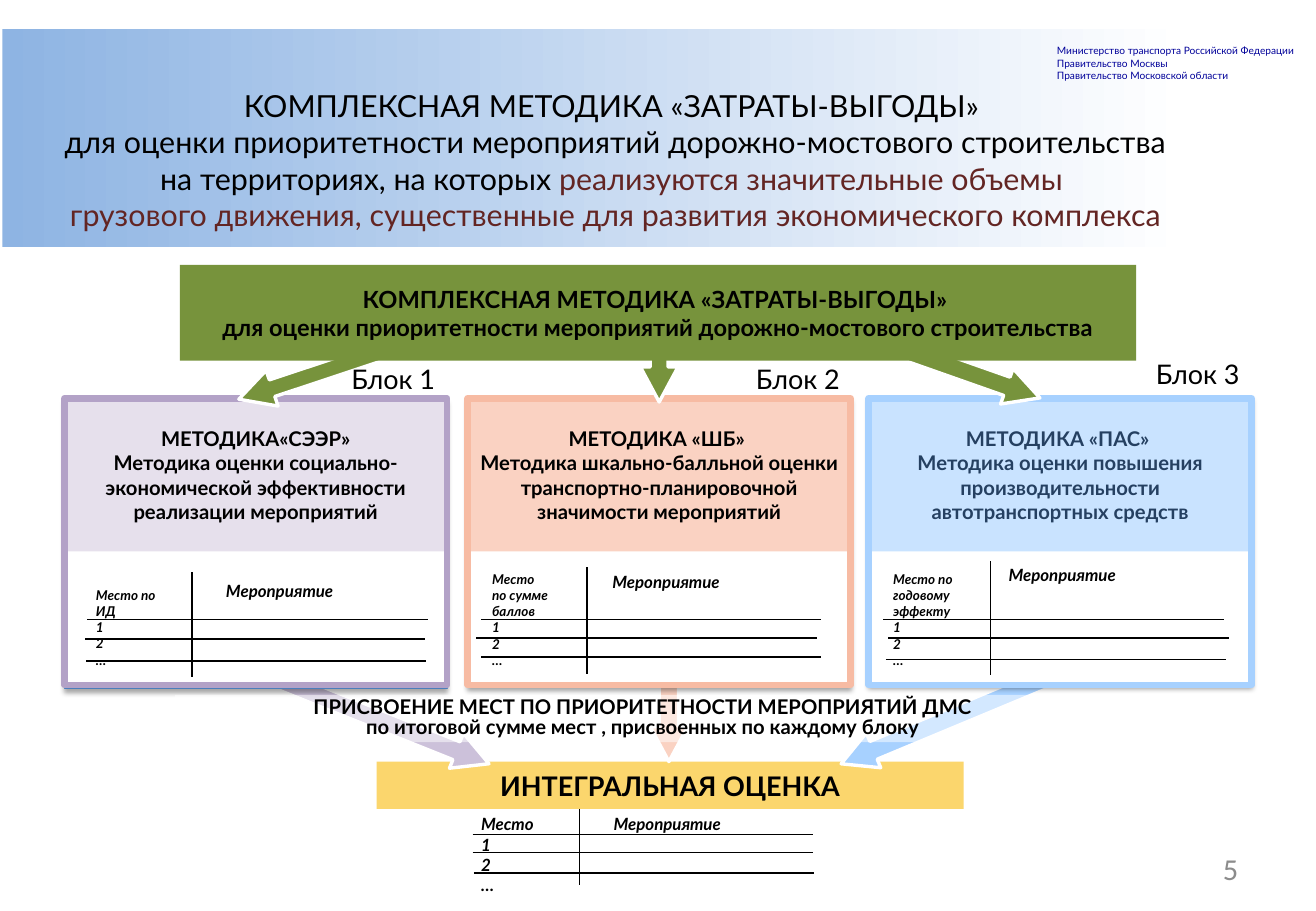
from dataclasses import dataclass

from lxml import etree
from pptx import Presentation
from pptx.dml.color import RGBColor
from pptx.enum.shapes import MSO_CONNECTOR, MSO_SHAPE
from pptx.enum.text import MSO_ANCHOR, MSO_AUTO_SIZE, PP_ALIGN
from pptx.oxml.ns import qn
from pptx.util import Pt

PX = 9144  # one hundred px to the inch
FONT = "Lato"
COLORS = {
    "black": "000000", "white": "FFFFFF", "banner": "8EB4E3", "navy": "000099",
    "maroon": "632523", "green": "77933C", "yellow": "FBD66D", "edge": "4B7EBC",
    "lilac": "E6E0EC", "lilac_arrow": "CCC1DA", "lilac_border": "B3A2C7",
    "peach": "FAD2C2", "peach_border": "F7BBA3", "sky": "C9E3FF",
    "sky_border": "A7D1FF", "ink": "254061", "gray": "8C8C8C",
}


@dataclass(frozen=True)
class Box:
    left: int
    top: int
    width: int
    height: int

    def emu(self) -> tuple:
        return tuple(n * PX for n in (self.left, self.top, self.width, self.height))


@dataclass(frozen=True)
class Style:
    size: int
    color: str = "black"
    bold: bool = False
    italic: bool = False
    align: PP_ALIGN = PP_ALIGN.LEFT
    anchor: MSO_ANCHOR = MSO_ANCHOR.MIDDLE
    inset: tuple = (10, 5)
    spacing: float = 1.0
    font: str = FONT


@dataclass(frozen=True)
class Arrow:
    box: Box
    color: str
    rotation: float
    shaft: float


@dataclass(frozen=True)
class MiniTable:
    header: Box
    places: Box
    caption: tuple
    size: int
    rules: tuple  # left and top of each horizontal rule
    divider: tuple  # x, top, bottom


@dataclass(frozen=True)
class Card:
    left: int
    back_top: int
    fill: str
    border: str
    ink: str
    inset: tuple
    lines: tuple
    label: str
    label_box: Box
    table: MiniTable


CARD_WIDTH, CARD_TOP, CARD_HEIGHT, PANEL_HEIGHT = 315, 328, 236, 126
RULE_LENGTH = 280
TIGHT = (7, 4)
CENTER = PP_ALIGN.CENTER

CARDS = (
    Card(53, 330, "lilac", "lilac_border", "black", TIGHT,
         ("МЕТОДИКА«СЭЭР»", "Методика оценки социально-экономической эффективности "
          "реализации мероприятий"), "Блок 1", Box(265, 293, 103, 37),
         MiniTable(Box(179, 474, 154, 24), Box(72, 479, 64, 75), ("Место по ИД",), 8,
                   ((72, 510), (70, 526), (71, 544)), (158, 471, 557))),
    Card(385, 328, "peach", "peach_border", "black", (10, 5),
         ("МЕТОДИКА «ШБ» ", "Методика шкально-балльной оценки "
          "транспортно-планировочной значимости мероприятий"),
         "Блок 2", Box(593, 293, 108, 37),
         MiniTable(Box(497, 467, 193, 24), Box(398, 466, 79, 88),
                   ("Место ", "по сумме баллов"), 8,
                   ((396, 510), (392, 525), (396, 541)), (483, 467, 555))),
    Card(715, 327, "sky", "sky_border", "ink", (10, 5),
         ("МЕТОДИКА «ПАС» ", "Методика оценки повышения производительности "
          "автотранспортных средств"), "Блок 3", Box(918, 289, 112, 37),
         MiniTable(Box(823, 461, 193, 24), Box(728, 466, 87, 88),
                   ("Место по годовому эффекту",), 8,
                   ((727, 510), (731, 525), (729, 543)), (815, 462, 556))),
)
RESULT_TABLE = MiniTable(Box(498, 666, 193, 24), Box(389, 666, 64, 75), ("Место",), 10,
                         ((389, 687), (389, 702), (390, 719)), (477, 666, 729))
ARROWS_TO_RESULT = (
    Arrow(Box(295, 493, 31, 198), "lilac_arrow", 291.8, 0.511),
    Arrow(Box(764, 498, 31, 189), "sky_border", 67.4, 0.511),
    Arrow(Box(535, 562, 31, 65), "peach", 0, 0.511),
)
ARROWS_TO_CARDS = (
    Arrow(Box(284, 186, 31, 217), "green", 71.6, 0.464),
    Arrow(Box(738, 183, 31, 217), "green", 289.4, 0.517),
    Arrow(Box(527, 278, 31, 53), "green", 0, 0.472),
)


def rgb(name: str) -> RGBColor:
    return RGBColor.from_string(COLORS[name])


def write(shape, lines: tuple, style: Style) -> None:
    frame = shape.text_frame
    frame.text = "\n".join(lines)
    frame.word_wrap = True
    frame.auto_size = MSO_AUTO_SIZE.NONE
    frame.vertical_anchor = style.anchor
    frame.margin_left = frame.margin_right = style.inset[0] * PX
    frame.margin_top = frame.margin_bottom = style.inset[1] * PX
    for para in frame.paragraphs:
        para.alignment = style.align
        para.line_spacing = style.spacing
        for span in para.runs:
            span.font.name, span.font.size = style.font, Pt(style.size)
            span.font.bold, span.font.italic = style.bold, style.italic
            span.font.color.rgb = rgb(style.color)


def add_text(shapes, box: Box, lines: tuple, style: Style) -> None:
    write(shapes.add_textbox(*box.emu()), lines, style)


def add_block(shapes, box: Box, fill: str = "", line: str = "", weight: float = 0,
              kind: MSO_SHAPE = MSO_SHAPE.RECTANGLE):
    shape = shapes.add_shape(kind, *box.emu())
    shape.shadow.inherit = False
    if fill:
        shape.fill.solid()
        shape.fill.fore_color.rgb = rgb(fill)
    else:
        shape.fill.background()
    if line:
        shape.line.color.rgb = rgb(line)
        shape.line.width = Pt(weight)
    else:
        shape.line.fill.background()
    return shape


def add_arrow(shapes, arrow: Arrow) -> None:
    shape = add_block(shapes, arrow.box, arrow.color, "white", 2, MSO_SHAPE.DOWN_ARROW)
    shape.adjustments[0], shape.adjustments[1] = arrow.shaft, 0.931
    shape.rotation = arrow.rotation


def add_rule(shapes, *ends: int) -> None:
    rule = shapes.add_connector(MSO_CONNECTOR.STRAIGHT, *(n * PX for n in ends))
    rule.line.color.rgb = rgb("black")
    rule.line.width = Pt(1)
    etree.SubElement(rule.element.spPr, qn("a:effectLst"))


def add_mini_table(shapes, table: MiniTable) -> None:
    group = shapes.add_group_shape().shapes
    for left, top in table.rules:
        add_rule(group, left, top, left + RULE_LENGTH, top)
    add_text(group, table.header, ("Мероприятие",), Style(10, bold=True, italic=True, inset=TIGHT))
    add_text(group, table.places, (*table.caption, "1", "2", "…"),
             Style(table.size, bold=True, italic=True, inset=TIGHT))
    x, top, bottom = table.divider
    add_rule(group, x, top, x, bottom)


def add_drop_shadow(shape) -> None:
    effects = shape.element.spPr.find(qn("a:effectLst"))
    shadow = etree.SubElement(effects, qn("a:outerShdw"), blurRad=str(Pt(3.1)),
                              dist=str(Pt(1.8)), dir="5400000", rotWithShape="0")
    color = etree.SubElement(shadow, qn("a:srgbClr"), val=COLORS["black"])
    etree.SubElement(color, qn("a:alpha"), val="35000")


def main() -> None:
    deck = Presentation()
    deck.slide_width, deck.slide_height = 1083 * PX, 750 * PX
    page = deck.slides.add_slide(deck.slide_layouts[5])
    shapes = page.shapes

    # Banner and title
    banner = add_block(shapes, Box(2, 24, 1083, 179), "banner")
    banner.fill.gradient()
    banner.fill.gradient_angle = 0
    for stop, position, color in zip(banner.fill.gradient_stops, (0, 0.9), ("banner", "white")):
        stop.position = position
        stop.color.rgb = rgb(color)
    add_text(shapes, Box(860, 32, 220, 40),
             ("Министерство транспорта Российской Федерации", "Правительство Москвы",
              "Правительство Московской области"), Style(6, "navy", anchor=MSO_ANCHOR.TOP))
    title = shapes.title
    title.left, title.top, title.width, title.height = Box(38, 57, 937, 149).emu()
    title_style = Style(18, align=CENTER)
    write(title, ("КОМПЛЕКСНАЯ МЕТОДИКА «ЗАТРАТЫ-ВЫГОДЫ» ",
                  "для оценки приоритетности мероприятий дорожно-мостового строительства "
                  "на территориях, на которых ",
                  "грузового движения, существенные для развития экономического комплекса"),
          title_style)
    middle, last = title.text_frame.paragraphs[1:]
    accent = middle.add_run()
    accent.text = "реализуются значительные объемы "
    accent.font.name, accent.font.size = FONT, Pt(title_style.size)
    for span in (accent, last.runs[0]):
        span.font.color.rgb = rgb("maroon")
    shapes.element.append(title.element)

    # Result bar and the arrows leading to it
    result = add_block(shapes, Box(310, 627, 483, 39), "yellow")
    write(result, ("ИНТЕГРАЛЬНАЯ ОЦЕНКА",), Style(16, bold=True, align=CENTER))
    for arrow in ARROWS_TO_RESULT:
        add_arrow(shapes, arrow)
    for card in CARDS:
        add_drop_shadow(add_block(shapes, Box(card.left, card.back_top, CARD_WIDTH, 237),
                                  "white", "edge", 0.75))
    add_mini_table(shapes, RESULT_TABLE)
    ranking = add_block(shapes, Box(144, 572, 770, 39), "white")
    veil = ranking.element.spPr.find(qn("a:solidFill"))[0]
    etree.SubElement(veil, qn("a:alpha"), val="50000")
    write(ranking, ("ПРИСВОЕНИЕ МЕСТ ПО ПРИОРИТЕТНОСТИ МЕРОПРИЯТИЙ ДМС",
                    "по итоговой сумме мест , присвоенных по каждому блоку"),
          Style(12, bold=True, align=CENTER, spacing=0.8))

    # Method cards
    for card in CARDS:
        panel = add_block(shapes, Box(card.left, CARD_TOP, CARD_WIDTH, PANEL_HEIGHT), card.fill)
        write(panel, card.lines, Style(12, card.ink, bold=True, align=CENTER, inset=card.inset))
        add_block(shapes, Box(card.left, CARD_TOP, CARD_WIDTH, CARD_HEIGHT),
                  line=card.border, weight=4)
        add_mini_table(shapes, card.table)

    # Green heading, its arrows and the block labels
    for arrow in ARROWS_TO_CARDS:
        add_arrow(shapes, arrow)
    heading = add_block(shapes, Box(148, 218, 787, 79), "green")
    write(heading, ("КОМПЛЕКСНАЯ МЕТОДИКА «ЗАТРАТЫ-ВЫГОДЫ» ",
                    "для оценки приоритетности мероприятий дорожно-мостового строительства"),
          Style(14, bold=True, align=CENTER, inset=TIGHT))
    for card in CARDS:
        add_text(shapes, card.label_box, (card.label,), Style(16, align=PP_ALIGN.RIGHT))

    # Page number
    add_text(shapes, Box(776, 695, 253, 40), ("5",),
             Style(18, "gray", align=PP_ALIGN.RIGHT, font="Calibri"))
    deck.save("out.pptx")


if __name__ == "__main__":
    main()
